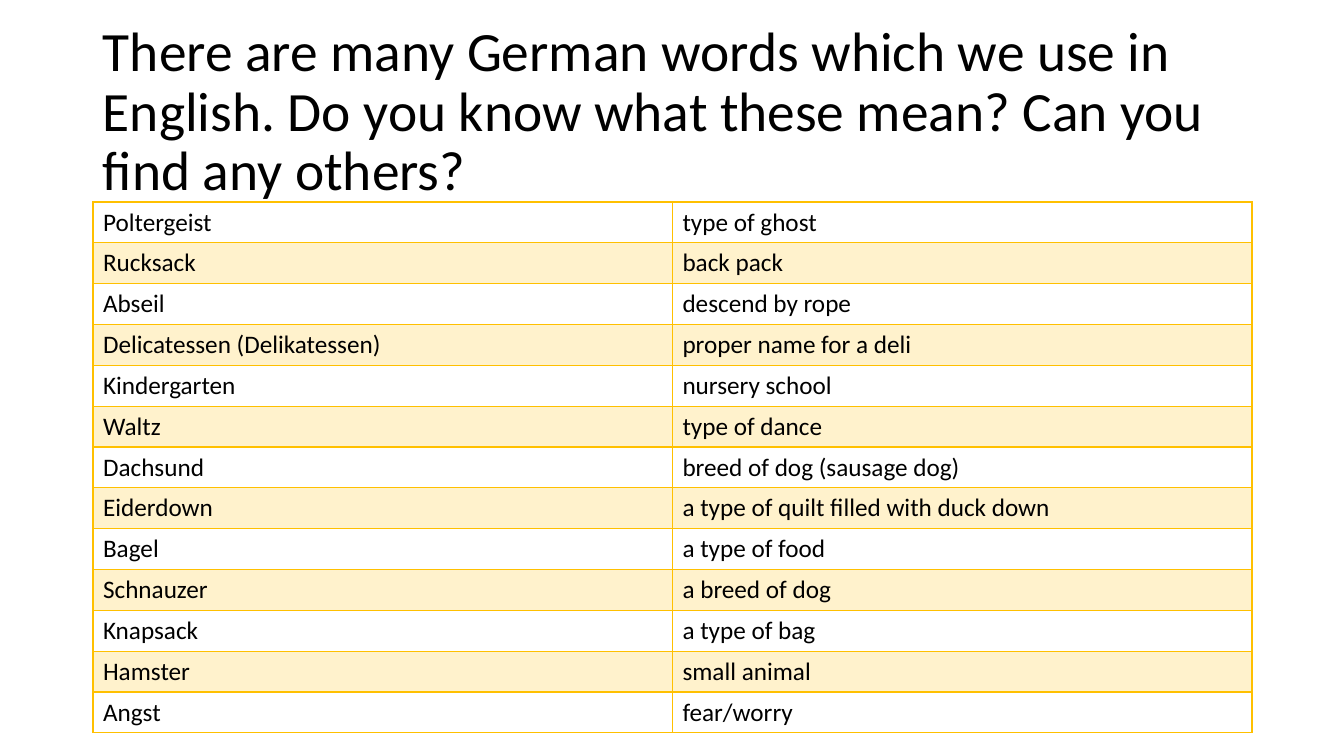
from lxml import etree
from pptx import Presentation
from pptx.dml.color import RGBColor
from pptx.enum.text import MSO_ANCHOR
from pptx.oxml.ns import qn
from pptx.util import Pt

MIDDLE = MSO_ANCHOR.MIDDLE
TOP = MSO_ANCHOR.TOP

# Content
TITLE = ("There are many German words which we use in English. "
         "Do you know what these mean? Can you find any others?")
WORDS = [
    ("Poltergeist", "type of ghost"),
    ("Rucksack", "back pack"),
    ("Abseil", "descend by rope"),
    ("Delicatessen (Delikatessen)", "proper name for a deli"),
    ("Kindergarten", "nursery school"),
    ("Waltz", "type of dance"),
    ("Dachsund", "breed of dog (sausage dog)"),
    ("Eiderdown", "a type of quilt filled with duck down"),
    ("Bagel", "a type of food"),
    ("Schnauzer", "a breed of dog"),
    ("Knapsack", "a type of bag"),
    ("Hamster", "small animal"),
    ("Angst", "fear/worry"),
]
FONT = "Calibri"
BLACK, GOLD = "000000", "FFC000"
BAND_ALPHA = 20

# Layout in px
PX_PER_INCH = 100.8
SLIDE_SIZE = (1344, 756)
TITLE_BOX = (93, 40, 1159, 146)
TABLE_BOX = (93, 202, 1159, 531)


def px(length):
    return round(length * 914400 / PX_PER_INCH)


def color(hex_string):
    return RGBColor.from_string(hex_string)


def write_text(frame, text, size, line_spacing=1.0):
    paragraph = frame.paragraphs[0]
    paragraph.line_spacing = line_spacing
    run = paragraph.add_run()
    run.text = text
    run.font.size = Pt(size)
    run.font.name = FONT
    run.font.color.rgb = color(BLACK)


def set_borders(cell, hex_string, width):
    properties = cell._tc.get_or_add_tcPr()
    for side in ("lnL", "lnR", "lnT", "lnB"):
        line = etree.SubElement(properties, qn("a:" + side), w=str(Pt(width)))
        fill = etree.SubElement(line, qn("a:solidFill"))
        etree.SubElement(fill, qn("a:srgbClr"), val=hex_string)


def set_fill(cell, hex_string, alpha):
    cell.fill.solid()
    cell.fill.fore_color.rgb = color(hex_string)
    value = cell._tc.tcPr.find(".//" + qn("a:solidFill") + "[last()]")
    value = cell._tc.tcPr.find(qn("a:solidFill")).find(qn("a:srgbClr"))
    etree.SubElement(value, qn("a:alpha"), val=str(alpha * 1000))


def add_title(slide):
    shape = slide.shapes.add_textbox(*map(px, TITLE_BOX))
    frame = shape.text_frame
    frame.word_wrap = True
    frame.vertical_anchor = MIDDLE
    write_text(frame, TITLE, size=39.6, line_spacing=0.9)


def add_word_table(slide):
    table = slide.shapes.add_table(len(WORDS), 2, *map(px, TABLE_BOX)).table
    table.first_row = False
    table.horz_banding = False
    for row_index, row in enumerate(WORDS):
        table.rows[row_index].height = px(TABLE_BOX[3] / len(WORDS))
        for column_index, text in enumerate(row):
            cell = table.cell(row_index, column_index)
            cell.vertical_anchor = TOP
            write_text(cell.text_frame, text, size=18)
            set_borders(cell, GOLD, width=1)
            # Every second row is tinted
            if row_index % 2:
                set_fill(cell, GOLD, BAND_ALPHA)
            else:
                cell.fill.background()


def main():
    presentation = Presentation()
    presentation.slide_width, presentation.slide_height = map(px, SLIDE_SIZE)
    slide = presentation.slides.add_slide(presentation.slide_layouts[6])
    add_title(slide)
    add_word_table(slide)
    presentation.save("out.pptx")


if __name__ == "__main__":
    main()
